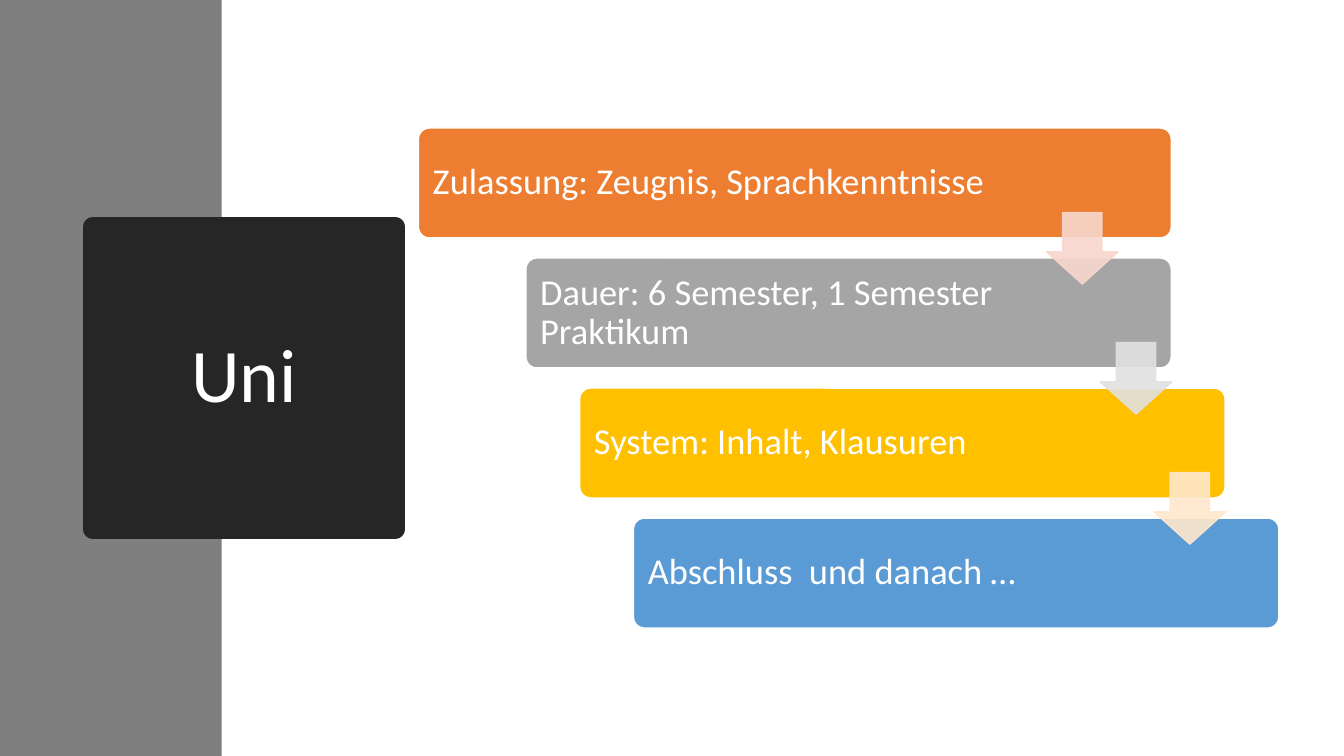
from lxml import etree
from pptx import Presentation
from pptx import util as u
from pptx.dml.color import RGBColor
from pptx.enum import shapes, text
from pptx.oxml.ns import qn

COLUMN = 6.4 / 12
ROW = 1.29
GRID_LEFT, GRID_TOP = 4.15, 1.27
BAR_HEIGHT = 1.09
ARROW_SIZE = 0.71

STEPS = [
    ("Zulassung: Zeugnis, Sprachkenntnisse", 0, 14, "ED7D31", "F8D7CE"),
    ("Dauer: 6 Semester, 1 Semester Praktikum", 2, 12, "A5A5A5", "E1E1E1"),
    ("System: Inhalt, Klausuren", 3, 12, "FFC000", "FFE8CC"),
    ("Abschluss  und danach …", 4, 12, "5B9BD5", None),
]


def colour(value):
    return RGBColor.from_string(value)


class Slide:
    font = "Calibri"
    ink = "FFFFFF"

    def __init__(self, deck):
        self.page = deck.slides.add_slide(deck.slide_layouts[5])

    def paint(self, shape, fill, line=None, width=1):
        shape.fill.solid()
        shape.fill.fore_color.rgb = colour(fill)
        if line:
            shape.line.color.rgb = colour(line)
            shape.line.width = u.Pt(width)
        else:
            shape.line.fill.background()

    def add(self, kind, left, top, width, height):
        shape = self.page.shapes.add_shape(
            kind, u.Inches(left), u.Inches(top), u.Inches(width), u.Inches(height))
        shape.shadow.inherit = False
        return shape

    def label(self, shape, words, size, align):
        frame = shape.text_frame
        frame.text = words
        frame.word_wrap = True
        frame.auto_size = text.MSO_AUTO_SIZE.NONE
        frame.vertical_anchor = text.MSO_ANCHOR.MIDDLE
        para = frame.paragraphs[0]
        para.alignment = align
        para.line_spacing = 0.9
        para.font.name = self.font
        para.font.size = u.Pt(size)
        para.font.color.rgb = colour(self.ink)

    def sidebar(self, width, height, fill):
        self.paint(self.add(shapes.MSO_SHAPE.RECTANGLE, 0, 0, width, height), fill)

    def title(self, words, left, top, side, fill):
        title = self.page.shapes.title
        title.left, title.top = u.Inches(left), u.Inches(top)
        title.width = title.height = u.Inches(side)
        self.paint(title, fill, fill, 13.75)
        outline = title._element.spPr.find(qn("a:ln"))
        etree.SubElement(outline, qn("a:round"))
        self.label(title, words, 54, text.PP_ALIGN.CENTER)
        self.page.shapes._spTree.append(title._element)

    def bar(self, words, column, row, columns, fill):
        bar = self.add(shapes.MSO_SHAPE.ROUNDED_RECTANGLE, GRID_LEFT + column * COLUMN,
                       GRID_TOP + row * ROW, columns * COLUMN, BAR_HEIGHT)
        bar.adjustments[0] = 0.1
        self.paint(bar, fill, "FFFFFF")
        self.label(bar, words, 26, text.PP_ALIGN.LEFT)
        frame = bar.text_frame
        frame.margin_left = frame.margin_top = frame.margin_bottom = u.Inches(0.11)
        frame.margin_right = u.Inches(1.35)

    def arrow(self, column, row, fill):
        arrow = self.add(shapes.MSO_SHAPE.DOWN_ARROW, GRID_LEFT + column * COLUMN,
                         GRID_TOP + row * ROW, ARROW_SIZE, ARROW_SIZE)
        arrow.adjustments[0] = 0.55
        arrow.adjustments[1] = 0.45
        self.paint(arrow, fill, fill)
        for tint in arrow._element.spPr.iter(qn("a:srgbClr")):
            etree.SubElement(tint, qn("a:alpha"), val="90000")


def main():
    deck = Presentation()
    deck.slide_width, deck.slide_height = u.Inches(13.33), u.Inches(7.5)
    slide = Slide(deck)
    slide.sidebar(2.2, 7.5, "7F7F7F")
    slide.title("Uni", 0.92, 2.25, 3, "262626")
    for row, (words, column, columns, fill, _) in enumerate(STEPS):
        slide.bar(words, column, row, columns, fill)
    for row, (*_, tint) in enumerate(STEPS[:-1]):
        slide.arrow(11.68 + row, row + 0.65, tint)
    deck.save("out.pptx")


if __name__ == "__main__":
    main()
